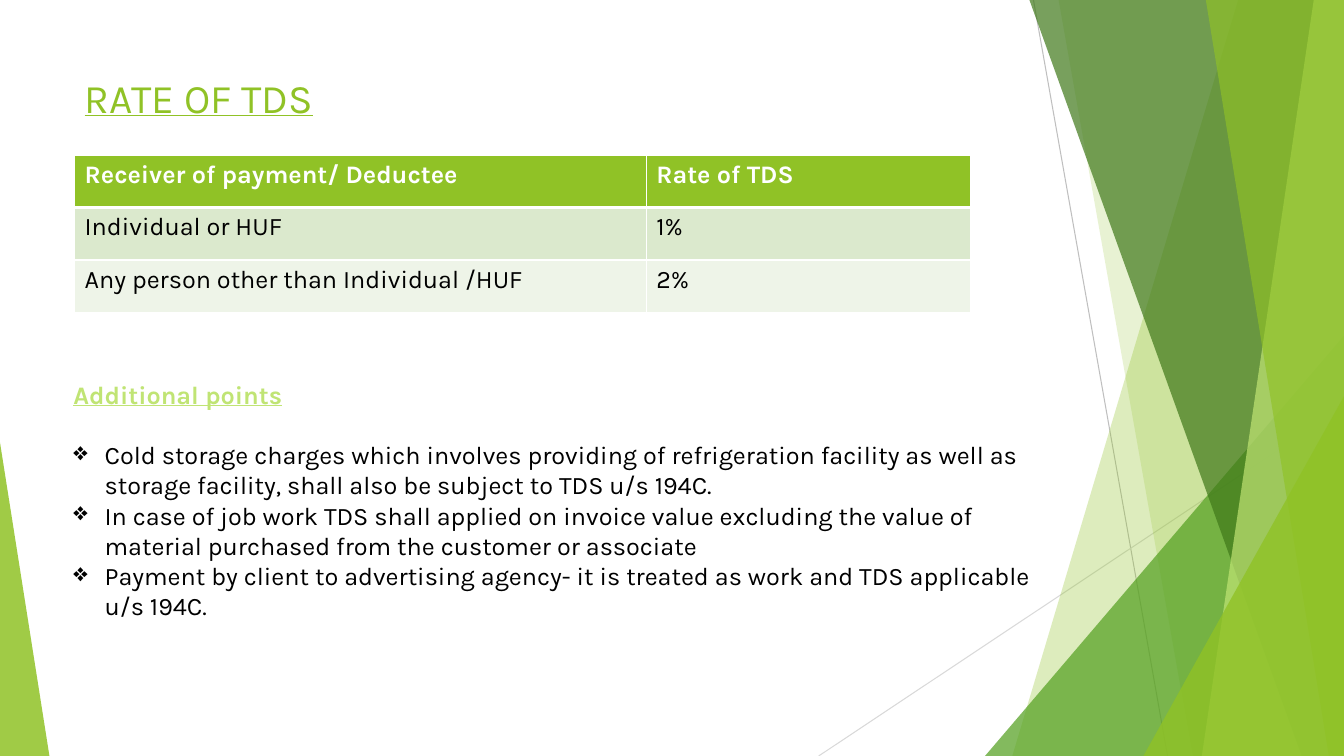
from dataclasses import dataclass

from lxml.etree import SubElement
from pptx import Presentation
from pptx.dml.color import RGBColor
from pptx.enum.shapes import MSO_CONNECTOR, MSO_SHAPE
from pptx.enum.text import MSO_ANCHOR, MSO_AUTO_SIZE, PP_ALIGN
from pptx.oxml.ns import qn
from pptx.util import Inches, Pt


@dataclass(frozen=True)
class Theme:
    font: str = "Karla"
    title_size: int = 29
    body_size: int = 18
    green: str = "90C226"
    lime: str = "C0E474"
    leaf: str = "54A021"
    forest: str = "3F7819"
    black: str = "000000"
    white: str = "FFFFFF"
    steep_line: str = "BFBFBF"
    shallow_line: str = "D9D9D9"
    row_fills: tuple = ("90C226", "DBE9CD", "EEF4E8")


@dataclass(frozen=True)
class Box:
    left: float
    top: float
    width: float
    height: float

    @property
    def right(self):
        return self.left + self.width

    @property
    def bottom(self):
        return self.top + self.height

    def lengths(self):
        return [Inches(value) for value in (self.left, self.top, self.width, self.height)]


THEME = Theme()
RATES = [
    ("Receiver of payment/ Deductee", "Rate of TDS"),
    ("Individual or HUF", "1%"),
    ("Any person other than Individual /HUF", "2%"),
]
POINTS = [
    "Cold storage charges which involves providing of refrigeration facility as well as "
    "storage facility, shall also be subject to TDS u/s 194C.",
    "In case of job work TDS shall applied on invoice value excluding the value of "
    "material purchased from the customer or associate",
    "Payment by client to advertising agency- it is treated as work and TDS applicable u/s 194C.",
]


def style_paragraph(paragraph, size, color, bold=False, underline=False):
    font = paragraph.font
    font.name, font.size = THEME.font, Pt(size)
    font.bold, font.underline = bold, underline
    font.color.rgb = RGBColor.from_string(color)


def paint(shape, color, opacity):
    """Give a shape a translucent fill with no line or shadow."""
    shape.shadow.inherit = False
    shape.line.fill.background()
    shape.fill.solid()
    shape.fill.fore_color.rgb = RGBColor.from_string(color)
    color_element = shape._element.spPr.find(qn("a:solidFill"))[0]
    SubElement(color_element, qn("a:alpha"), val=str(opacity * 1000))


def add_thin_line(slide, start, end, color):
    points = [Inches(value) for value in (*start, *end)]
    line = slide.shapes.add_connector(MSO_CONNECTOR.STRAIGHT, *points)
    line.line.width = Pt(0.75)
    line.line.color.rgb = RGBColor.from_string(color)
    SubElement(line._element.spPr, qn("a:effectLst"))


def add_band(slide, box, top_reach, bottom_reach, color, opacity):
    """Fill the box's right edge, reaching left by the given widths."""
    corners = [
        (box.right - top_reach, box.top),
        (box.right, box.top),
        (box.right, box.bottom),
        (box.right - bottom_reach, box.bottom),
    ]
    points = [(Inches(x), Inches(y)) for x, y in corners]
    builder = slide.shapes.build_freeform(*points[0])
    builder.add_line_segments(points[1:], close=True)
    paint(builder.convert_to_shape(), color, opacity)


def add_corner(slide, box, peak, color, opacity):
    """Add a right triangle whose peak is at the left (0) or right (1)."""
    triangle = slide.shapes.add_shape(MSO_SHAPE.ISOSCELES_TRIANGLE, *box.lengths())
    triangle.adjustments[0] = peak
    paint(triangle, color, opacity)


def add_facets(slide, box):
    def right_corner(width, height, color, opacity):
        corner = Box(box.right - width, box.bottom - height, width, height)
        add_corner(slide, corner, 1, color, opacity)

    add_thin_line(slide, (box.right - 3.08, box.top), (box.right - 1.75, box.bottom),
                  THEME.steep_line)
    add_thin_line(slide, (box.right, box.bottom - 3.47), (box.right - 5.21, box.bottom),
                  THEME.shallow_line)
    add_band(slide, box, 1.05, 3.29, THEME.green, 30)
    add_band(slide, box, 2.83, 1.5, THEME.green, 20)
    right_corner(3.56, 4.17, THEME.leaf, 72)
    add_band(slide, box, 3.12, 0.42, THEME.forest, 70)
    add_band(slide, box, 0.3, 1.41, THEME.lime, 70)
    add_band(slide, box, 1.37, 0.15, THEME.green, 65)
    right_corner(1.99, 3.57, THEME.green, 80)
    add_corner(slide, Box(box.left, box.bottom - 3.11, 0.49, 3.11), 0, THEME.green, 85)


def fill_title(slide, box):
    title = slide.shapes.title
    title.left, title.top, title.width, title.height = box.lengths()
    frame = title.text_frame
    frame.text = "RATE OF TDS"
    frame.auto_size = MSO_AUTO_SIZE.NONE
    frame.vertical_anchor = MSO_ANCHOR.TOP
    paragraph = frame.paragraphs[0]
    paragraph.alignment = PP_ALIGN.LEFT
    style_paragraph(paragraph, THEME.title_size, THEME.green, underline=True)


def set_borders(cell, top, bottom):
    properties = cell._tc.get_or_add_tcPr()
    for side, points in (("L", 1), ("R", 1), ("T", top), ("B", bottom)):
        border = SubElement(properties, qn(f"a:ln{side}"), w=str(Pt(points)))
        fill = SubElement(border, qn("a:solidFill"))
        SubElement(fill, qn("a:srgbClr"), val=THEME.white)


def add_rate_table(slide, box):
    table = slide.shapes.add_table(len(RATES), 2, *box.lengths()).table
    for column, width in zip(table.columns, (5.67, box.width - 5.67)):
        column.width = Inches(width)
    for row_index, texts in enumerate(RATES):
        table.rows[row_index].height = Inches(box.height / len(RATES))
        is_header = row_index == 0
        for column_index, text in enumerate(texts):
            cell = table.cell(row_index, column_index)
            cell.text = text
            set_borders(cell, 3 if row_index == 1 else 1, 3 if is_header else 1)
            cell.fill.solid()
            cell.fill.fore_color.rgb = RGBColor.from_string(THEME.row_fills[row_index])
            style_paragraph(cell.text_frame.paragraphs[0], THEME.body_size,
                            THEME.white if is_header else THEME.black, bold=is_header)


def add_bullet(paragraph, indent):
    properties = paragraph._p.get_or_add_pPr()
    properties.set("marL", str(Inches(indent)))
    properties.set("indent", str(-Inches(indent)))
    bullet = SubElement(properties, qn("a:buChar"), char="❖")
    properties.insert(0, bullet)


def add_points(slide, box):
    frame = slide.shapes.add_textbox(*box.lengths()).text_frame
    frame.word_wrap = True
    heading = frame.paragraphs[0]
    heading.text = "Additional points"
    heading.space_after = Pt(21.6)
    style_paragraph(heading, THEME.body_size, THEME.lime, bold=True, underline=True)
    for point in POINTS:
        paragraph = frame.add_paragraph()
        paragraph.text = point
        add_bullet(paragraph, 0.31)
        style_paragraph(paragraph, THEME.body_size, THEME.black)


def main():
    presentation = Presentation()
    presentation.slide_width, presentation.slide_height = Inches(13.33), Inches(7.5)
    slide = presentation.slides.add_slide(presentation.slide_layouts[5])
    add_facets(slide, Box(0, 0, 13.33, 7.5))
    fill_title(slide, Box(0.74, 0.67, 9.4, 2.2))
    add_rate_table(slide, Box(0.74, 1.54, 8.89, 1.56))
    add_points(slide, Box(0.63, 3.71, 9.77, 3.45))
    presentation.save("out.pptx")


if __name__ == "__main__":
    main()
